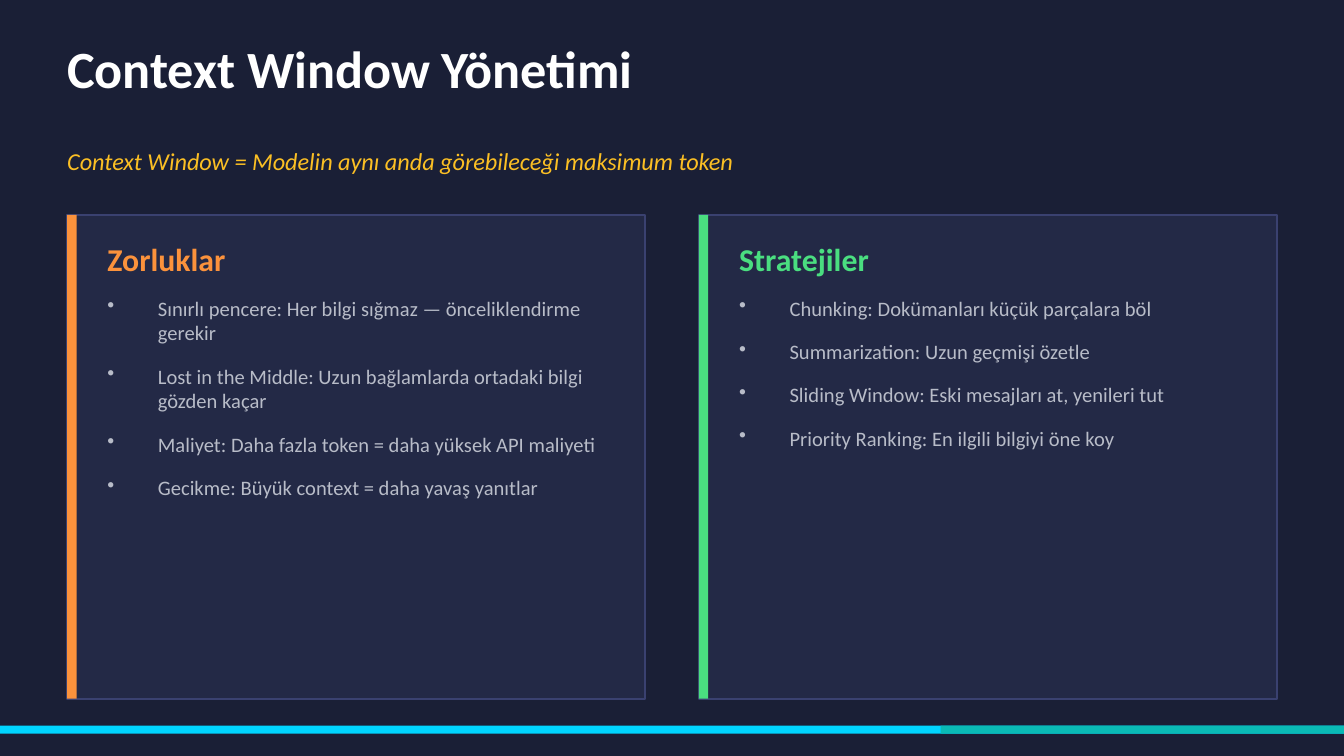
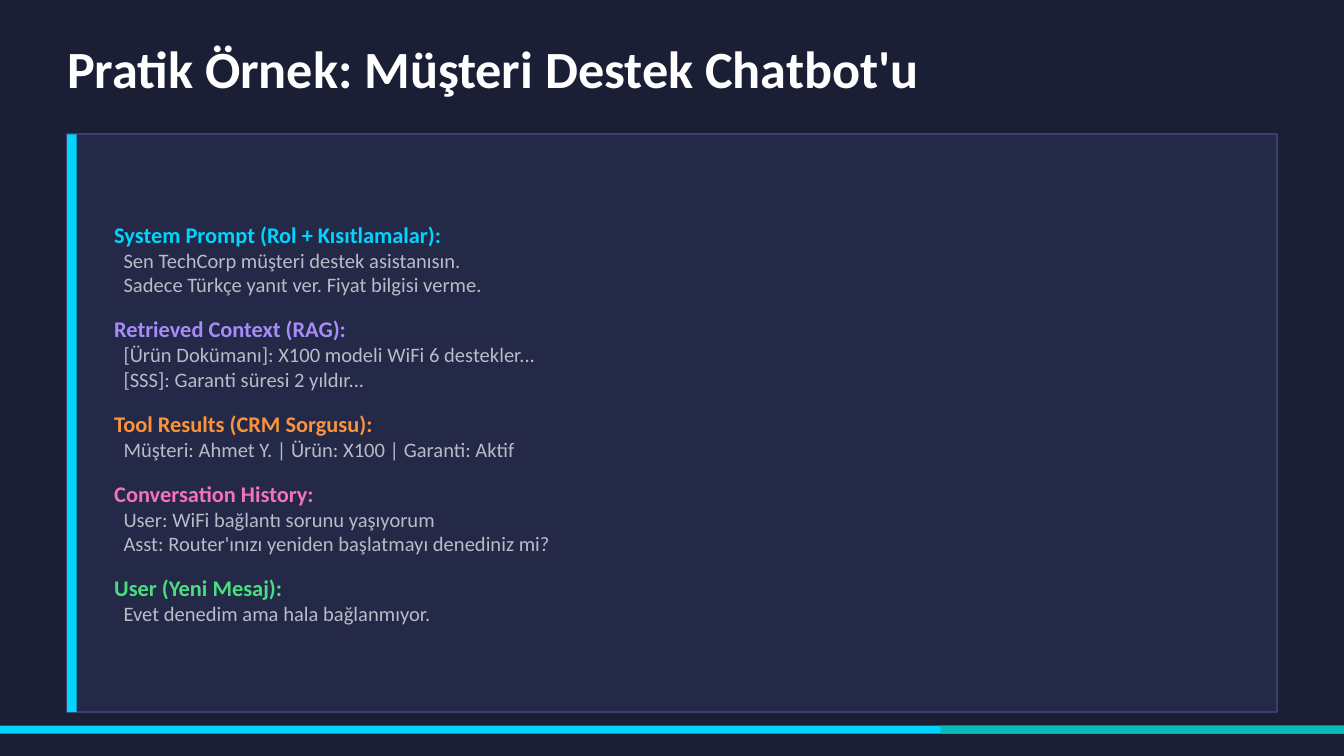
from lxml.etree import SubElement
from pptx import Presentation
from pptx.dml.color import RGBColor
from pptx.enum.shapes import MSO_SHAPE as Shape
from pptx.enum.text import MSO_ANCHOR as Anchor
from pptx.oxml.ns import qn
from pptx.util import Pt

COLORS = {
    "night": "1A1F36", "panel": "232946", "border": "3A4170",
    "white": "FFFFFF", "body": "B8BCC8", "amber": "FBBF24",
    "cyan": "00D4FF", "teal": "0ABAB5", "orange": "FB923C",
    "green": "4ADE80", "violet": "A78BFA", "pink": "F472B6",
}
FONT = "Calibri"
WIDTH, HEIGHT = 720, 405
MARGIN = 36
CONTENT = WIDTH - 2 * MARGIN
CARD_GAP = 28.8
CARD_WIDTH = (CONTENT - CARD_GAP) / 2
CARD_INSET = 21.6
BULLET_INDENT = 27

COLUMNS = [
    ("Zorluklar", "orange", [
        "Sınırlı pencere: Her bilgi sığmaz — önceliklendirme gerekir",
        "Lost in the Middle: Uzun bağlamlarda ortadaki bilgi gözden kaçar",
        "Maliyet: Daha fazla token = daha yüksek API maliyeti",
        "Gecikme: Büyük context = daha yavaş yanıtlar",
    ]),
    ("Stratejiler", "green", [
        "Chunking: Dokümanları küçük parçalara böl",
        "Summarization: Uzun geçmişi özetle",
        "Sliding Window: Eski mesajları at, yenileri tut",
        "Priority Ranking: En ilgili bilgiyi öne koy",
    ]),
]

PROMPT_PARTS = [
    ("System Prompt (Rol + Kısıtlamalar):", "cyan", [
        "Sen TechCorp müşteri destek asistanısın.",
        "Sadece Türkçe yanıt ver. Fiyat bilgisi verme.",
    ]),
    ("Retrieved Context (RAG):", "violet", [
        "[Ürün Dokümanı]: X100 modeli WiFi 6 destekler...",
        "[SSS]: Garanti süresi 2 yıldır...",
    ]),
    ("Tool Results (CRM Sorgusu):", "orange", [
        "Müşteri: Ahmet Y. | Ürün: X100 | Garanti: Aktif",
    ]),
    ("Conversation History:", "pink", [
        "User: WiFi bağlantı sorunu yaşıyorum",
        "Asst: Router'ınızı yeniden başlatmayı denediniz mi?",
    ]),
    ("User (Yeni Mesaj):", "green", [
        "Evet denedim ama hala bağlanmıyor.",
    ]),
]


def rgb(name):
    return RGBColor.from_string(COLORS[name])


class Deck:
    def __init__(self):
        self.deck = Presentation()
        self.deck.slide_width, self.deck.slide_height = Pt(WIDTH), Pt(HEIGHT)
        self.page = None

    def new_page(self, title):
        self.page = self.deck.slides.add_slide(self.deck.slide_layouts[6])
        fill = self.page.background.fill
        fill.solid()
        fill.fore_color.rgb = rgb("night")
        self.line_of_text(title, MARGIN, 14.4, CONTENT, 43.2,
                          size=28, color="white", bold=True)

    def footer(self):
        self.rect(0, 388.8, WIDTH, 4.32, "cyan")
        self.rect(504, 388.8, WIDTH - 504, 4.32, "teal")

    def rect(self, left, top, width, height, color, border=None):
        box = self.page.shapes.add_shape(
            Shape.RECTANGLE, Pt(left), Pt(top), Pt(width), Pt(height))
        box.shadow.inherit = False
        box.fill.solid()
        box.fill.fore_color.rgb = rgb(color)
        if border:
            box.line.color.rgb = rgb(border)
            box.line.width = Pt(1)
        else:
            box.line.fill.background()

    def card(self, left, top, width, height, accent):
        self.rect(left, top, width, height, "panel", border="border")
        self.rect(left, top, 5.04, height, accent)

    def text_frame(self, left, top, width, height, anchor=Anchor.MIDDLE):
        box = self.page.shapes.add_textbox(
            Pt(left), Pt(top), Pt(width), Pt(height))
        frame = box.text_frame
        layout = {"word_wrap": True, "vertical_anchor": anchor,
                  "margin_left": 0, "margin_right": 0,
                  "margin_top": 0, "margin_bottom": 0}
        for name, value in layout.items():
            setattr(frame, name, value)
        return frame

    def paragraph(self, frame, text, size, color, before=0, after=0,
                  indent=0, bullet=False, **style):
        first = frame.paragraphs[0]
        para = frame.add_paragraph() if first.runs else first
        if before and para is not first:
            para.space_before = Pt(before)
        if after:
            para.space_after = Pt(after)
        if indent:
            properties = para._p.get_or_add_pPr()
            properties.set("marL", str(Pt(indent)))
            if bullet:
                properties.set("indent", str(-Pt(indent)))
                SubElement(properties, qn("a:buChar")).set("char", "•")
        span = para.add_run()
        span.text = text
        span.font.color.rgb = rgb(color)
        for name, value in {"name": FONT, "size": Pt(size), **style}.items():
            setattr(span.font, name, value)

    def line_of_text(self, text, left, top, width, height, **style):
        self.paragraph(self.text_frame(left, top, width, height), text, **style)

    def bullet_card(self, left, top, height, heading, accent, items):
        self.card(left, top, CARD_WIDTH, height, accent)
        text_left, text_width = left + CARD_INSET, 273.6
        self.line_of_text(heading, text_left, top + 10.8, text_width, 25.2,
                          size=17, color=accent, bold=True)
        frame = self.text_frame(text_left, top + 43.2, text_width, 201.6,
                                Anchor.TOP)
        for item in items:
            self.paragraph(frame, item, 11, "body", after=10,
                           indent=BULLET_INDENT, bullet=True)

    def prompt_card(self, top, height, parts):
        self.card(MARGIN, top, CONTENT, height, "cyan")
        frame = self.text_frame(61.2, top + 10.8, 597.6, height - 21.6)
        for heading, accent, lines in parts:
            self.paragraph(frame, heading, 12, accent, before=9.8, bold=True)
            for line in lines:
                self.paragraph(frame, line, 11, "body", indent=5)


def main():
    deck = Deck()

    deck.new_page("Context Window Yönetimi")
    deck.line_of_text(
        "Context Window = Modelin aynı anda görebileceği maksimum token",
        MARGIN, 72, CONTENT, 28.8, size=13, color="amber", italic=True)
    for index, column in enumerate(COLUMNS):
        left = MARGIN + index * (CARD_WIDTH + CARD_GAP)
        deck.bullet_card(left, 115.2, 259.2, *column)
    deck.footer()

    deck.new_page("Pratik Örnek: Müşteri Destek Chatbot'u")
    deck.prompt_card(72, 309.6, PROMPT_PARTS)
    deck.footer()

    deck.deck.save("out.pptx")


if __name__ == "__main__":
    main()
